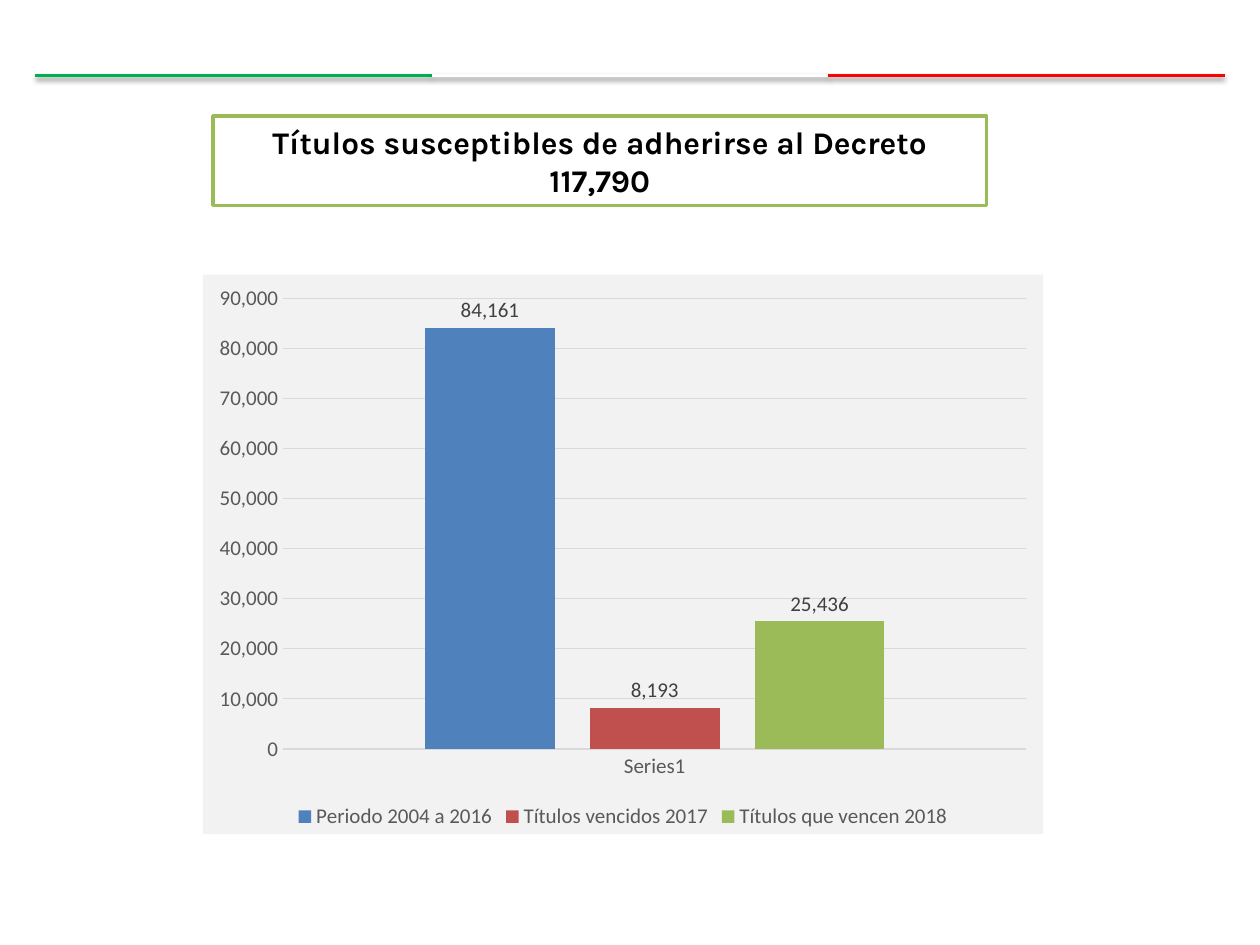
from lxml import etree
from pptx import Presentation
from pptx.chart.data import CategoryChartData
from pptx.dml.color import RGBColor
from pptx.enum.chart import XL_CHART_TYPE as CT, XL_LABEL_POSITION as LabelPos
from pptx.enum.chart import XL_LEGEND_POSITION as LegendPos, XL_TICK_MARK as Tick
from pptx.enum.shapes import MSO_CONNECTOR as Connector, MSO_SHAPE as Shape
from pptx.enum.text import MSO_ANCHOR as Anchor, PP_ALIGN as Align
from pptx.oxml import parse_xml
from pptx.oxml.ns import nsdecls, qn
from pptx.util import Inches, Pt

BLACK = RGBColor(0x00, 0x00, 0x00)
WHITE = RGBColor(0xFF, 0xFF, 0xFF)
FLAG_GREEN = RGBColor(0x00, 0xB0, 0x50)
FLAG_RED = RGBColor(0xFF, 0x00, 0x00)
BLUE = RGBColor(0x4F, 0x81, 0xBD)
RED = RGBColor(0xC0, 0x50, 0x4D)
GREEN = RGBColor(0x9B, 0xBB, 0x59)
PANEL = RGBColor(0xF2, 0xF2, 0xF2)
GRID = RGBColor(0xD9, 0xD9, 0xD9)
AXIS_TEXT = RGBColor(0x59, 0x59, 0x59)
LABEL_TEXT = RGBColor(0x40, 0x40, 0x40)

TITLE = ("Títulos susceptibles de adherirse al Decreto", "117,790")
SERIES = (
    ("Periodo 2004 a 2016", 84161, BLUE),
    ("Títulos vencidos 2017", 8193, RED),
    ("Títulos que vencen 2018", 25436, GREEN),
)


def set_font(font, color, **values):
    for name, value in values.items():
        setattr(font, name, value)
    font.color.rgb = color


def set_line(line, color, width):
    line.color.rgb = color
    line.width = Pt(width)


def add_shadow(s):
    effects = etree.SubElement(s._element.spPr, qn("a:effectLst"))
    shadow = etree.SubElement(effects, qn("a:outerShdw"), blurRad=str(Pt(3.1)),
                              dist=str(Pt(1.6)), dir="5400000", rotWithShape="0")
    color = etree.SubElement(shadow, qn("a:srgbClr"), val=str(BLACK))
    etree.SubElement(color, qn("a:alpha"), val="38000")


def add_flag_rule(slide, left, right, y, colors):
    step = (right - left) / len(colors)
    for i, color in enumerate(colors):
        x = left + i * step
        s = slide.shapes.add_connector(Connector.STRAIGHT, Inches(x), Inches(y),
                                       Inches(x + step), Inches(y))
        set_line(s.line, color, 2)
        add_shadow(s)


def add_title(slide, lines, left, top, width, height):
    s = slide.shapes.add_shape(Shape.RECTANGLE, Inches(left), Inches(top),
                               Inches(width), Inches(height))
    s.shadow.inherit = False
    s.fill.solid()
    s.fill.fore_color.rgb = WHITE
    set_line(s.line, GREEN, 2)
    tf = s.text_frame
    tf.word_wrap = True
    tf.vertical_anchor = Anchor.MIDDLE
    for i, text in enumerate(lines):
        p = tf.add_paragraph() if i else tf.paragraphs[0]
        p.alignment = Align.CENTER
        r = p.add_run()
        r.text = text
        set_font(r.font, BLACK, name="Karla", size=Pt(18), bold=True)


def fill_chart_area(chart, color):
    # The area format has to stand just before the chart's text format
    area = parse_xml(
        f'<c:spPr {nsdecls("c", "a")}><a:solidFill><a:srgbClr val="{color}"/>'
        '</a:solidFill><a:ln><a:noFill/></a:ln></c:spPr>')
    chart._chartSpace.find(qn("c:txPr")).addprevious(area)


def style_axes(chart, text):
    for axis in (chart.category_axis, chart.value_axis):
        axis.major_tick_mark = axis.minor_tick_mark = Tick.NONE
        set_font(axis.tick_labels.font, AXIS_TEXT, **text)
    set_line(chart.category_axis.format.line, GRID, 0.75)
    values = chart.value_axis
    values.format.line.fill.background()
    set_line(values.major_gridlines.format.line, GRID, 0.75)
    values.minimum_scale, values.maximum_scale, values.major_unit = 0, 90000, 10000
    values.tick_labels.number_format = "#,##0"
    values.tick_labels.number_format_is_linked = False


def add_column_chart(slide, left, top, width, height):
    data = CategoryChartData(number_format="#,##0")
    data.categories = ["Series1"]
    for name, value, _ in SERIES:
        data.add_series(name, [value])
    chart = slide.shapes.add_chart(CT.COLUMN_CLUSTERED, Inches(left), Inches(top),
                                   Inches(width), Inches(height), data).chart
    text = {"name": "Calibri", "size": Pt(12), "bold": False}
    set_font(chart.font, BLACK, name="Calibri", size=Pt(10))
    chart.has_title = False
    fill_chart_area(chart, PANEL)
    style_axes(chart, text)

    # Legend
    chart.has_legend = True
    chart.legend.position = LegendPos.BOTTOM
    chart.legend.include_in_layout = False
    set_font(chart.legend.font, AXIS_TEXT, **text)

    # Columns and their labels
    plot = chart.plots[0]
    plot.gap_width, plot.overlap = 219, -27
    plot.vary_by_categories = False
    for series, (_, _, color) in zip(plot.series, SERIES):
        series.format.fill.solid()
        series.format.fill.fore_color.rgb = color
        labels = series.data_labels
        labels.show_value = True
        labels.position = LabelPos.OUTSIDE_END
        set_font(labels.font, LABEL_TEXT, **text)


def main():
    prs = Presentation()
    prs.slide_width, prs.slide_height = Inches(10), Inches(7.5)
    slide = prs.slides.add_slide(prs.slide_layouts[6])
    add_flag_rule(slide, 0.28, 9.72, 0.6, (FLAG_GREEN, WHITE, FLAG_RED))
    add_title(slide, TITLE, 1.69, 0.92, 6.14, 0.71)
    add_column_chart(slide, 1.61, 2.18, 6.67, 4.44)
    prs.save("out.pptx")


if __name__ == "__main__":
    main()
